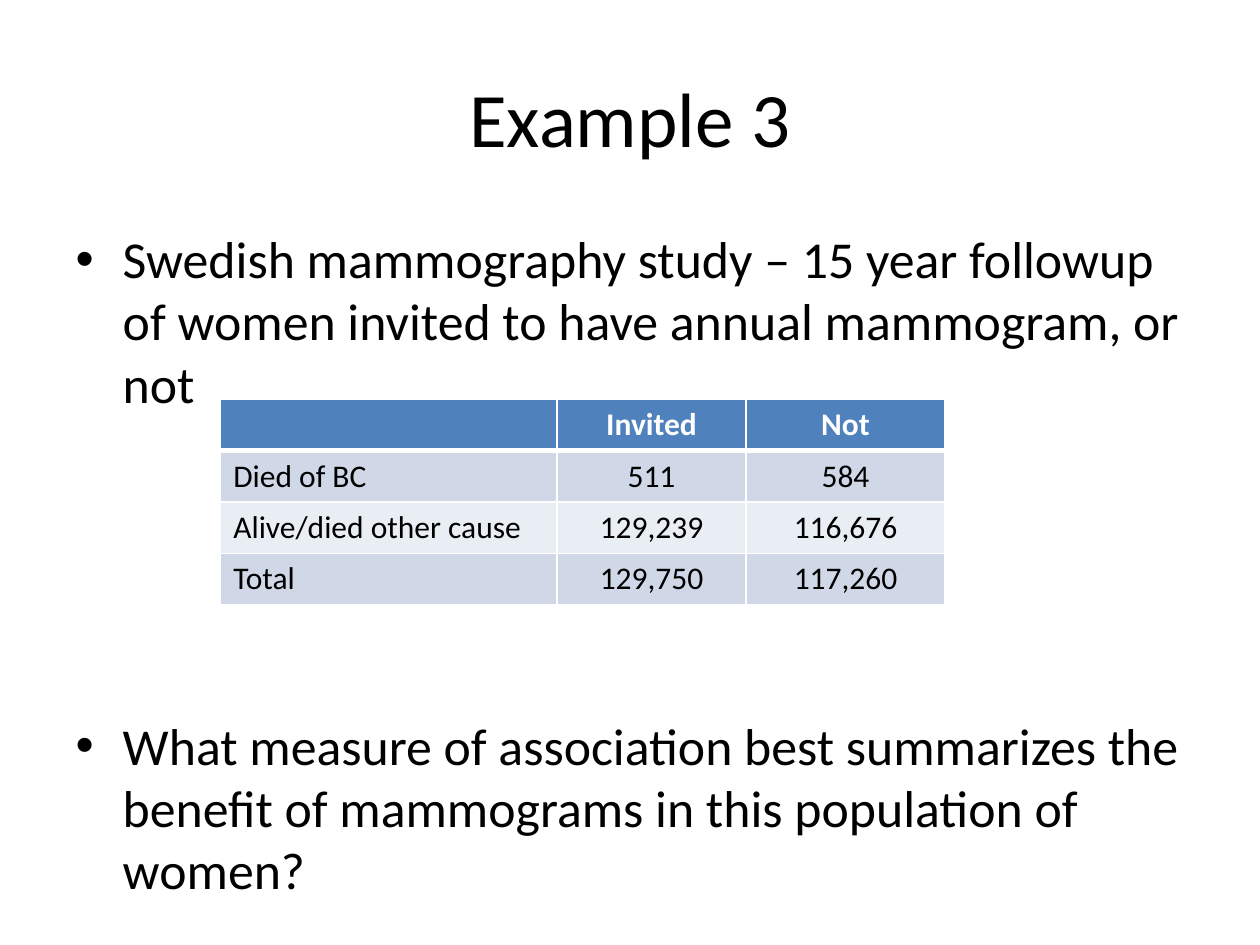
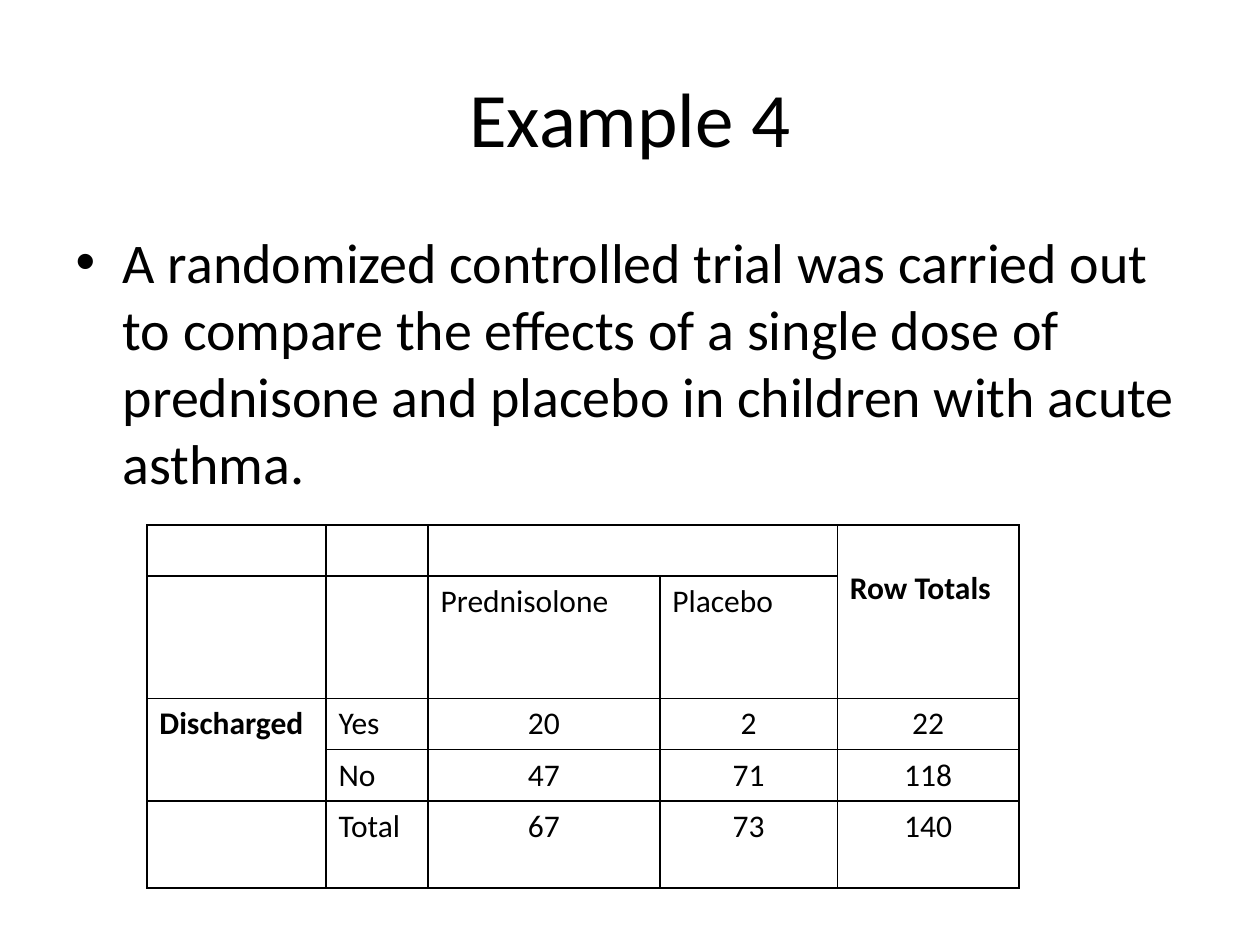
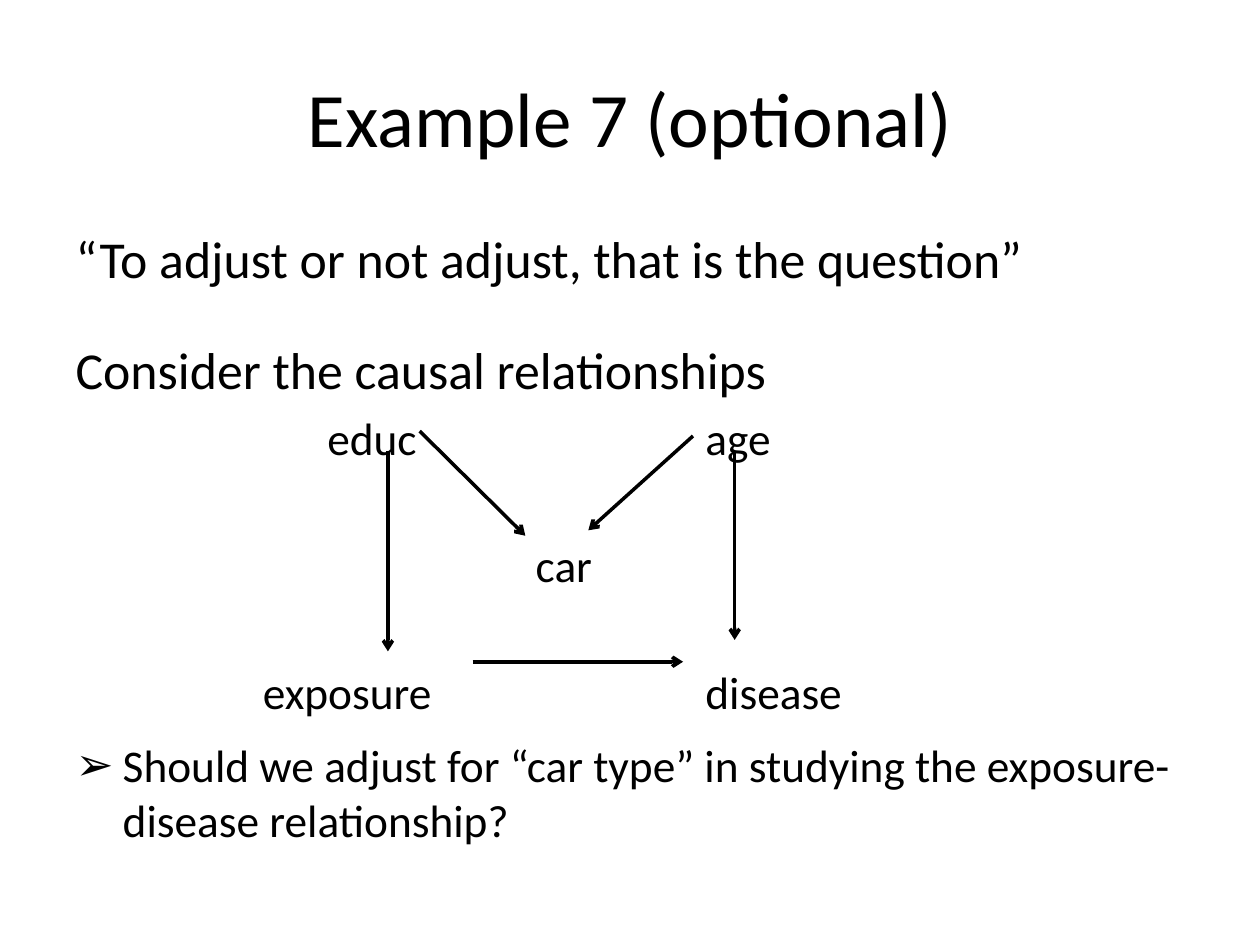
from dataclasses import dataclass

from lxml.etree import SubElement
from pptx import Presentation
from pptx.dml.color import RGBColor
from pptx.enum.shapes import MSO_CONNECTOR
from pptx.enum.text import MSO_ANCHOR, MSO_AUTO_SIZE, PP_ALIGN
from pptx.oxml.ns import qn
from pptx.util import Cm, Pt


@dataclass(frozen=True)
class Theme:
    font: str = "Calibri"
    ink: str = "000000"
    paper: str = "FFFFFF"
    header: str = "4F81BD"
    bands: tuple = ("D0D8E8", "E9EDF4")
    title_size: float = 44
    body_size: float = 32
    compact_size: float = 29.6
    diagram_size: float = 25.9
    table_size: float = 18
    hairline: float = 1
    header_rule: float = 3
    arrow_width: float = 2
    bullet_indent: float = 0.95
    cell_padding: float = 0.13
    row_height: float = 1.03


class Deck:
    def __init__(self, theme):
        self.theme = theme
        self.presentation = Presentation()
        self.presentation.slide_width = Cm(25.4)
        self.presentation.slide_height = Cm(19.05)
        self.slide = None

    def place(self, holder, left, top, width, height, anchor):
        holder.left, holder.top = Cm(left), Cm(top)
        holder.width, holder.height = Cm(width), Cm(height)
        frame = holder.text_frame
        frame.word_wrap = True
        frame.auto_size = MSO_AUTO_SIZE.NONE
        frame.vertical_anchor = anchor
        return frame

    def style(self, paragraph, size, color=None, bold=False, align=PP_ALIGN.LEFT):
        paragraph.alignment = align
        font = paragraph.font
        font.name, font.size, font.bold = self.theme.font, Pt(size), bold
        font.color.rgb = RGBColor.from_string(color or self.theme.ink)

    def new_slide(self, title):
        layout = self.presentation.slide_layouts[1]
        self.slide = self.presentation.slides.add_slide(layout)
        heading = self.place(self.slide.shapes.title, 1.27, 0.76, 22.86, 3.18,
                             MSO_ANCHOR.MIDDLE)
        heading.text = title
        self.style(heading.paragraphs[0], self.theme.title_size, align=PP_ALIGN.CENTER)
        self.body = self.place(self.slide.placeholders[1], 1.27, 4.45, 22.86, 12.57,
                               MSO_ANCHOR.TOP)

    def line_of_text(self, text, size, before=0, bullet=None):
        first = self.body.paragraphs[0]
        paragraph = self.body.add_paragraph() if first.text else first
        paragraph.text = text
        paragraph.space_before = Pt(before)
        properties = paragraph._p.get_or_add_pPr()
        indent = Cm(self.theme.bullet_indent) if bullet else 0
        properties.set("marL", str(indent))
        properties.set("indent", str(-indent))
        if bullet:
            SubElement(properties, qn("a:buChar"), char=bullet)
        else:
            SubElement(properties, qn("a:buNone"))
        self.style(paragraph, size)

    def label(self, text, left, top):
        frame = self.slide.shapes.add_textbox(
            Cm(left), Cm(top), Cm(4), Cm(1.12)).text_frame
        frame.word_wrap = True
        frame.margin_left = frame.margin_right = 0
        frame.margin_top = frame.margin_bottom = 0
        frame.text = text
        self.style(frame.paragraphs[0], self.theme.diagram_size)

    def table(self, left, top, widths, heights, rows):
        grid = self.slide.shapes.add_table(
            len(rows), len(widths), Cm(left), Cm(top),
            Cm(sum(widths)), Cm(sum(heights))).table
        for column, width in zip(grid.columns, widths):
            column.width = Cm(width)
        for row, height in zip(grid.rows, heights):
            row.height = Cm(height)
        for r, row in enumerate(rows):
            for c, text in enumerate(row):
                grid.cell(r, c).text = text
        return grid

    def cell(self, cell, fill, border, color=None, bold=False, centred=False,
             top=None, bottom=None):
        thin = self.theme.hairline
        properties = cell._tc.get_or_add_tcPr()
        sides = {"L": thin, "R": thin, "T": top or thin, "B": bottom or thin}
        for side, width in sides.items():
            edge = SubElement(properties, qn(f"a:ln{side}"), w=str(Pt(width)))
            SubElement(SubElement(edge, qn("a:solidFill")), qn("a:srgbClr"), val=border)
        if fill:
            cell.fill.solid()
            cell.fill.fore_color.rgb = RGBColor.from_string(fill)
        else:
            cell.fill.background()
        cell.margin_top = cell.margin_bottom = Cm(self.theme.cell_padding)
        self.style(cell.text_frame.paragraphs[0], self.theme.table_size, color, bold,
                   PP_ALIGN.CENTER if centred else PP_ALIGN.LEFT)

    def arrow(self, start, end):
        connector = self.slide.shapes.add_connector(
            MSO_CONNECTOR.STRAIGHT, *map(Cm, start + end))
        connector.line.color.rgb = RGBColor.from_string(self.theme.ink)
        connector.line.width = Pt(self.theme.arrow_width)
        SubElement(connector.line._get_or_add_ln(), qn("a:tailEnd"), type="arrow")
        SubElement(connector._element.spPr, qn("a:effectLst"))


def mammography(deck):
    theme = deck.theme
    deck.new_slide("Example 3")
    deck.line_of_text("Swedish mammography study – 15 year followup of women invited "
                      "to have annual mammogram, or not", theme.compact_size, bullet="•")
    deck.line_of_text("What measure of association best summarizes the benefit of "
                      "mammograms in this population of women?",
                      theme.compact_size, before=171.5, bullet="•")
    outcomes = [
        ("", "Invited", "Not"),
        ("Died of BC", "511", "584"),
        ("Alive/died other cause", "129,239", "116,676"),
        ("Total", "129,750", "117,260"),
    ]
    grid = deck.table(4.45, 8.05, (6.78, 3.81, 4.01),
                      [theme.row_height] * len(outcomes), outcomes)
    for r in range(len(outcomes)):
        header = r == 0
        for c in range(3):
            deck.cell(grid.cell(r, c),
                      theme.header if header else theme.bands[(r - 1) % 2],
                      theme.paper, theme.paper if header else theme.ink,
                      bold=header, centred=c > 0,
                      top=theme.header_rule if r == 1 else None,
                      bottom=theme.header_rule if header else None)


def asthma_trial(deck):
    theme = deck.theme
    deck.new_slide("Example 4")
    deck.line_of_text("A randomized controlled trial was carried out to compare the "
                      "effects of a single dose of prednisone and placebo in children "
                      "with acute asthma.", theme.body_size, bullet="•")
    discharges = [
        ("", "", "", "", "Row Totals"),
        ("", "", "Prednisolone", "Placebo", ""),
        ("Discharged", "Yes", "20", "2", "22"),
        ("", "No", "47", "71", "118"),
        ("", "Total", "67", "73", "140"),
    ]
    row = theme.row_height
    grid = deck.table(2.96, 10.58, (3.61, 2.06, 4.67, 3.58, 3.66),
                      (row, 2.46, row, row, 1.75), discharges)
    grid.first_row = grid.horz_banding = False
    for r, texts in enumerate(discharges):
        for c, text in enumerate(texts):
            deck.cell(grid.cell(r, c), None, theme.ink,
                      bold=text in ("Row Totals", "Discharged"),
                      centred=r > 1 and c > 1)
    for first, last in (((0, 2), (0, 3)), ((0, 4), (1, 4)), ((2, 0), (3, 0))):
        grid.cell(*first).merge(grid.cell(*last))
    grid.cell(0, 4).margin_top = Cm(0.9)


def causal_diagram(deck):
    theme = deck.theme
    deck.new_slide("Example 7 (optional)")
    deck.line_of_text("“To adjust or not adjust, that is the question”",
                      theme.compact_size)
    deck.line_of_text("Consider the causal relationships", theme.compact_size,
                      before=27.5)
    deck.line_of_text("Should we adjust for “car type” in studying the "
                      "exposure-disease relationship?", theme.diagram_size,
                      before=193, bullet="➢")
    for factor, left, level in (
        ("educ", 6.6, 0),
        ("age", 14.22, 0),
        ("car", 10.8, 1),
        ("exposure", 5.3, 2),
        ("disease", 14.22, 2),
    ):
        deck.label(factor, left, 8.27 + 2.56 * level)
    for start, end in (
        ((8.46, 8.69), (10.59, 10.8)),
        ((13.97, 8.79), (11.86, 10.69)),
        ((14.81, 9.09), (14.81, 12.9)),
        ((7.82, 9.09), (7.82, 13.13)),
        ((9.53, 13.34), (13.77, 13.34)),
    ):
        deck.arrow(start, end)


def main():
    deck = Deck(Theme())
    for build in (mammography, asthma_trial, causal_diagram):
        build(deck)
    deck.presentation.save("out.pptx")


if __name__ == "__main__":
    main()
